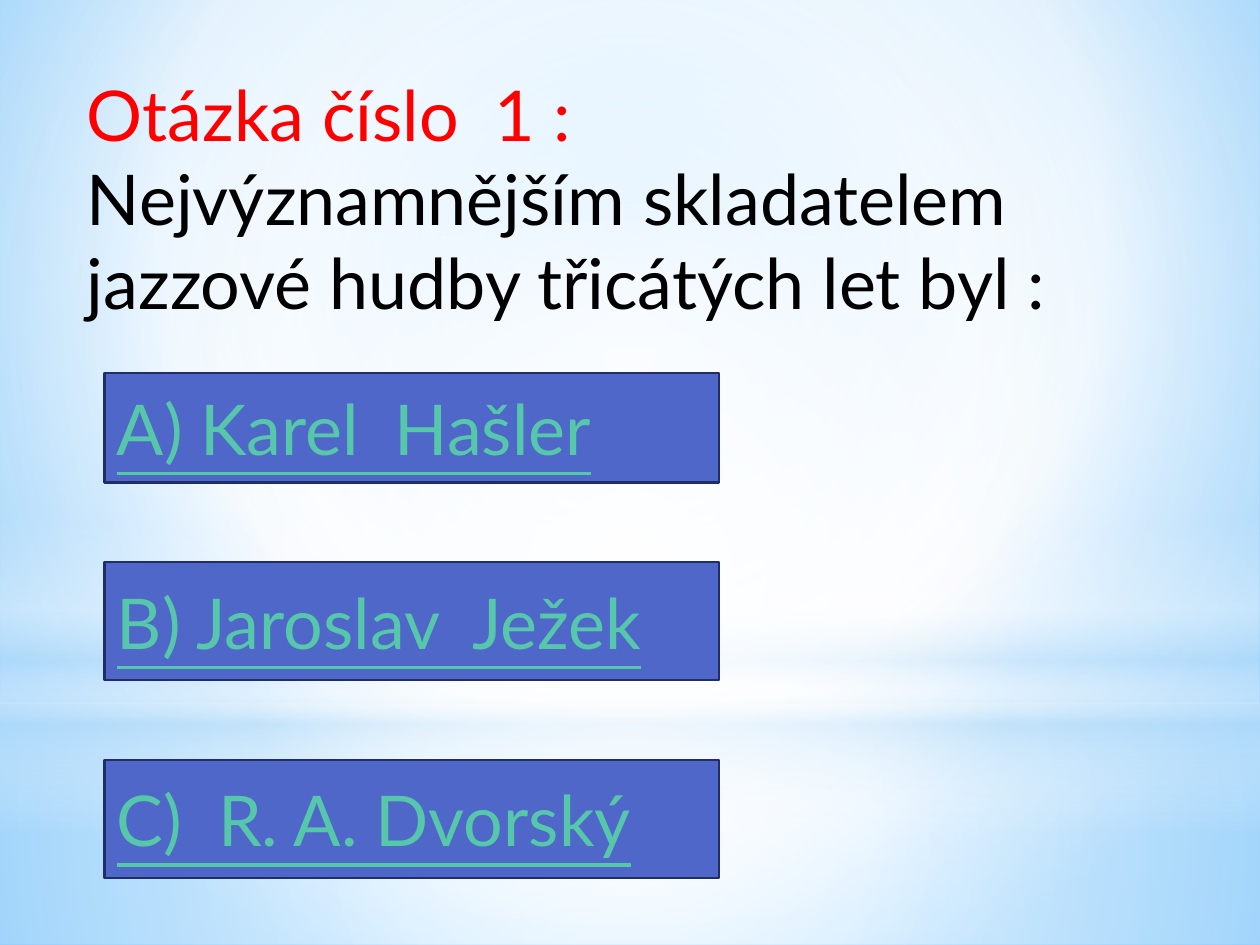
import pptx
import pptx.dml.color
import pptx.enum.shapes
import pptx.enum.text
import pptx.oxml
import pptx.oxml.ns
import pptx.util

Inches = pptx.util.Inches
Pt = pptx.util.Pt
MSO_SHAPE = pptx.enum.shapes.MSO_SHAPE

FONT = "Lato"
COLORS = {
    "heading": "FF0000",
    "question": "000000",
    "answer": "56C7AA",
    "button": "4E67C8",
    "button_line": "1F2E69",
    "white": "FFFFFF",
    "haze": "B4DCFA",
    "sky_inner": "9ED5FF",
    "sky_outer": "5BB9FF",
}
CENTER = (50, 50, 50, 50)


def rgb(name):
    return pptx.dml.color.RGBColor.from_string(COLORS[name])


def set_gradient(properties, stops, focus=None):
    """Swap the solid fill for a gradient: circular around focus, else top to bottom.

    Stops are (position, color name, opacity), in percent.
    """
    stop_xml = "".join(
        f'<a:gs pos="{position * 1000}"><a:srgbClr val="{COLORS[color]}">'
        f'<a:alpha val="{opacity * 1000}"/></a:srgbClr></a:gs>'
        for position, color, opacity in stops
    )
    if focus:
        sides = " ".join(f'{side}="{value * 1000}"' for side, value in zip("ltrb", focus))
        direction = f'<a:path path="circle"><a:fillToRect {sides}/></a:path>'
    else:
        direction = '<a:lin ang="5400000" scaled="0"/>'
    gradient = pptx.oxml.parse_xml(
        f'<a:gradFill {pptx.oxml.ns.nsdecls("a")} rotWithShape="1">'
        f"<a:gsLst>{stop_xml}</a:gsLst>{direction}</a:gradFill>"
    )
    solid = properties.find(pptx.oxml.ns.qn("a:solidFill"))
    properties.replace(solid, gradient)


def add_filled_shape(slide, kind, box, color):
    shape = slide.shapes.add_shape(kind, *map(Inches, box))
    shape.shadow.inherit = False
    shape.fill.solid()
    shape.fill.fore_color.rgb = rgb(color)
    return shape


def add_glow(slide, kind, top, height, stops, focus=None):
    glow = add_filled_shape(slide, kind, (0, top, 10, height), "white")
    glow.line.fill.background()
    set_gradient(glow.element.spPr, stops, focus)


def add_backdrop(slide):
    slide.background.fill.solid()
    slide.background.fill.fore_color.rgb = rgb("white")
    set_gradient(
        slide.element.cSld.bg.bgPr,
        [(0, "sky_inner", 100), (60, "white", 100), (100, "sky_outer", 100)],
        (20, 10, 20, 60),
    )
    add_glow(slide, MSO_SHAPE.RECTANGLE, 5.58, 1.92,
             [(0, "white", 91), (37, "white", 76), (100, "haze", 79)], CENTER)
    add_glow(slide, MSO_SHAPE.RECTANGLE, 0, 5.58,
             [(0, "white", 89), (48, "white", 62), (100, "haze", 79)], CENTER)
    add_glow(slide, MSO_SHAPE.RECTANGLE, 4.12, 2.5,
             [(0, "white", 0), (29, "white", 30), (45, "haze", 40),
              (55, "white", 26), (65, "haze", 60), (100, "white", 0)])
    add_glow(slide, MSO_SHAPE.OVAL, 1.75, 5.58,
             [(0, "white", 100), (56, "white", 0)], CENTER)


def format_run(run, color):
    run.font.name = FONT
    run.font.size = Pt(40)
    run.font.color.rgb = rgb(color)


def set_question(slide, heading, *lines):
    title = slide.shapes.title
    slide.shapes.element.append(title.element)  # in front of the backdrop
    title.left, title.top, title.width, title.height = map(Inches, (0.59, 0.52, 8.98, 2.12))
    frame = title.text_frame
    frame.text = "\v".join((heading, *lines))
    frame.word_wrap = True
    frame.auto_size = pptx.enum.text.MSO_AUTO_SIZE.SHAPE_TO_FIT_TEXT
    frame.vertical_anchor = pptx.enum.text.MSO_ANCHOR.TOP
    paragraph = frame.paragraphs[0]
    paragraph.alignment = pptx.enum.text.PP_ALIGN.LEFT
    for index, run in enumerate(paragraph.runs):
        format_run(run, "question" if index else "heading")


def add_answer(slide, text, top, height):
    button = add_filled_shape(slide, MSO_SHAPE.RECTANGLE, (0.83, top, 4.88, height), "button")
    button.line.color.rgb = rgb("button_line")
    button.line.width = Pt(1.25)
    frame = button.text_frame
    frame.text = text
    frame.vertical_anchor = pptx.enum.text.MSO_ANCHOR.MIDDLE
    paragraph = frame.paragraphs[0]
    paragraph.alignment = pptx.enum.text.PP_ALIGN.LEFT
    format_run(paragraph.runs[0], "answer")
    paragraph.runs[0].font.underline = True


def main():
    deck = pptx.Presentation()
    deck.slide_width, deck.slide_height = Inches(10), Inches(7.5)
    slide = deck.slides.add_slide(deck.slide_layouts.get_by_name("Title Only"))
    add_backdrop(slide)
    set_question(slide, "Otázka číslo  1 :", "Nejvýznamnějším skladatelem",
                 "jazzové hudby třicátých let byl :")
    for text, top, height in [
        ("A) Karel  Hašler", 2.96, 0.87),
        ("B) Jaroslav  Ježek", 4.46, 0.94),
        ("C)  R. A. Dvorský", 6.03, 0.94),
    ]:
        add_answer(slide, text, top, height)
    deck.save("out.pptx")


if __name__ == "__main__":
    main()
